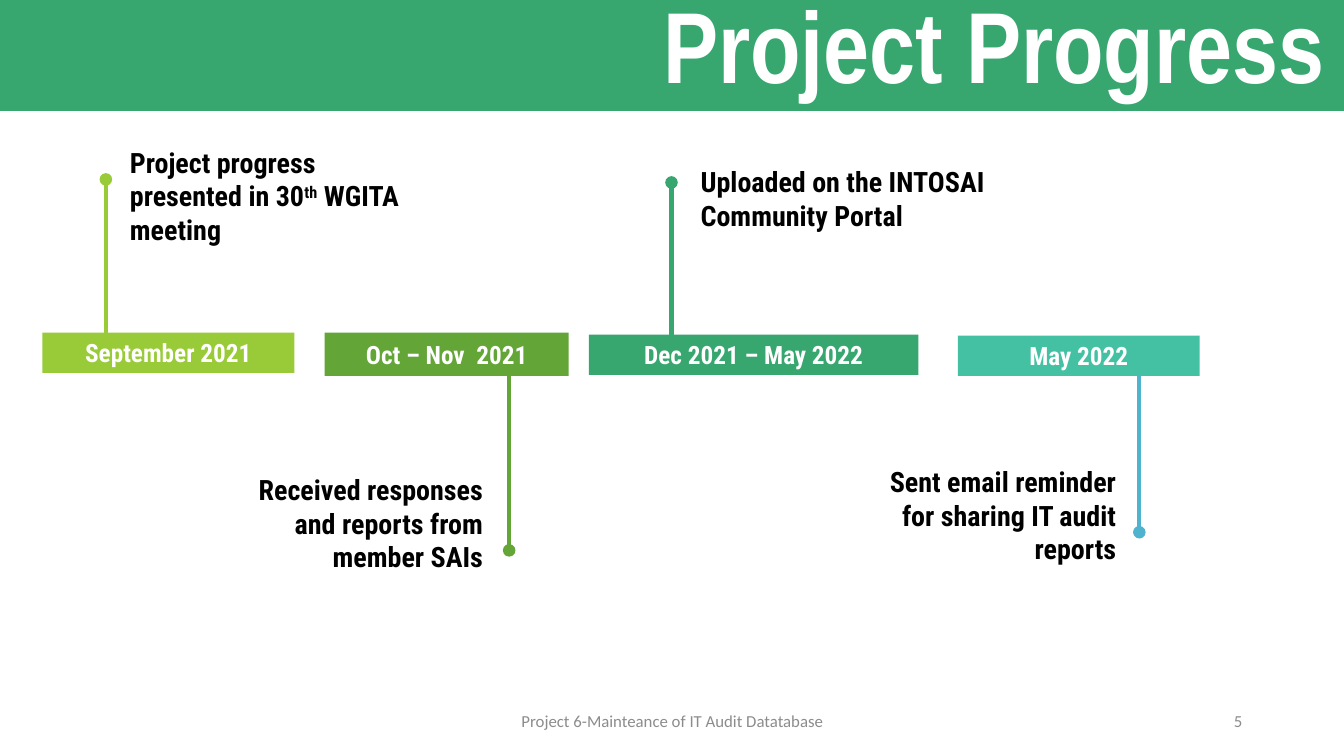
from lxml import etree
from pptx import Presentation
from pptx.dml.color import RGBColor
from pptx.enum.shapes import MSO_CONNECTOR, MSO_SHAPE
from pptx.enum.text import MSO_ANCHOR, MSO_AUTO_SIZE, PP_ALIGN
from pptx.oxml.ns import qn
from pptx.util import Inches, Pt

LEFT, CENTER, RIGHT = PP_ALIGN.LEFT, PP_ALIGN.CENTER, PP_ALIGN.RIGHT
MIDDLE = MSO_ANCHOR.MIDDLE
NO_AUTOFIT = MSO_AUTO_SIZE.NONE
RECTANGLE = MSO_SHAPE.RECTANGLE
STRAIGHT = MSO_CONNECTOR.STRAIGHT
LABEL_FONT = "Roboto Condensed"
GREEN = "37A76F"
GRAY = "8C8C8C"
WHITE = "FFFFFF"


def rgb(color):
    return RGBColor.from_string(color)


def write(shape, text, size, color, font_name, alignment, bold=True, inset=0.1):
    frame = shape.text_frame
    frame.word_wrap = True
    frame.auto_size = NO_AUTOFIT
    frame.vertical_anchor = MIDDLE
    frame.margin_left = frame.margin_right = Inches(0.1)
    frame.margin_top = frame.margin_bottom = Inches(inset)
    paragraph = frame.paragraphs[0]
    paragraph.alignment = alignment
    for index, part in enumerate(text.split("^")):
        run = paragraph.add_run()
        run.text = part
        run.font.size = Pt(size)
        run.font.name = font_name
        run.font.bold = bold
        run.font.color.rgb = rgb(color)
        if index % 2:
            run.font._element.set("baseline", "30000")


presentation = Presentation()
presentation.slide_width = Inches(13.33)
presentation.slide_height = Inches(7.5)
slide = presentation.slides.add_slide(presentation.slide_layouts[5])
shapes = slide.shapes

title = shapes.title
title.left, title.top = Inches(4.09), Inches(-0.22)
title.width, title.height = Inches(9.15), Inches(1.45)
write(title, "Project Progress", 72, WHITE, "Arial Narrow", RIGHT, inset=0.05)
title.text_frame.paragraphs[0].line_spacing = 0.9

band = shapes.add_shape(RECTANGLE, 0, 0, presentation.slide_width, Inches(1.1))
band.shadow.inherit = False
band.fill.solid()
band.fill.fore_color.rgb = rgb(GREEN)
band.line.color.rgb = rgb(GREEN)
band.line.width = Pt(1)
title.element.addprevious(band.element)

footers = [
    ("Project 6-Mainteance of IT Audit Datatabase", 4.42, 4.5, CENTER),
    ("5", 9.42, 3, RIGHT),
]
for text, left, width, alignment in footers:
    footer = shapes.add_textbox(Inches(left), Inches(6.95), Inches(width), Inches(0.4))
    write(footer, text, 12, GRAY, "Calibri", alignment, bold=False, inset=0.05)

milestones = [
    ("Oct – Nov  2021", (3.22, 3.3, 2.42, 0.43), "63A537",
     "Received responses and reports from member SAIs", (2.08, 5.02, 2.81, 0.34), RIGHT,
     (5.05, 5.46, 3.69), "63A537"),
    ("Dec 2021 – May 2022", (5.84, 3.32, 3.27, 0.4), GREEN,
     "Uploaded on the INTOSAI Community Portal", (6.85, 1.81, 3.8, 0.32), LEFT,
     (6.66, 1.81, 3.43), GREEN),
    ("September 2021", (0.42, 3.3, 2.5, 0.4), "99CB38",
     "Project progress presented in 30^th^ WGITA meeting", (1.19, 1.78, 2.9, 0.32), LEFT,
     (1.05, 1.78, 3.35), "99CB38"),
    ("May 2022", (9.5, 3.33, 2.4, 0.4), "44C1A3",
     "Sent email reminder for sharing IT audit reports", (8.38, 4.95, 2.79, 0.32), RIGHT,
     (11.3, 5.28, 3.69), "4EB3CF"),
]
for date, date_box, date_color, note, note_box, alignment, stem, stem_color in milestones:
    note_shape = shapes.add_textbox(*map(Inches, note_box))
    write(note_shape, note, 20, "000000", LABEL_FONT, alignment)

    x, dot_y, bar_y = map(Inches, stem)
    connector = shapes.add_connector(STRAIGHT, x, dot_y, x, bar_y)
    connector.line.color.rgb = rgb(stem_color)
    connector.line.width = Pt(3)
    etree.SubElement(connector.line._get_or_add_ln(), qn("a:headEnd"), type="oval")
    etree.SubElement(connector.element.spPr, qn("a:effectLst"))

    bar = shapes.add_shape(RECTANGLE, *map(Inches, date_box))
    bar.shadow.inherit = False
    bar.fill.solid()
    bar.fill.fore_color.rgb = rgb(date_color)
    bar.line.fill.background()
    write(bar, date, 18, WHITE, LABEL_FONT, CENTER)

presentation.save("out.pptx")
